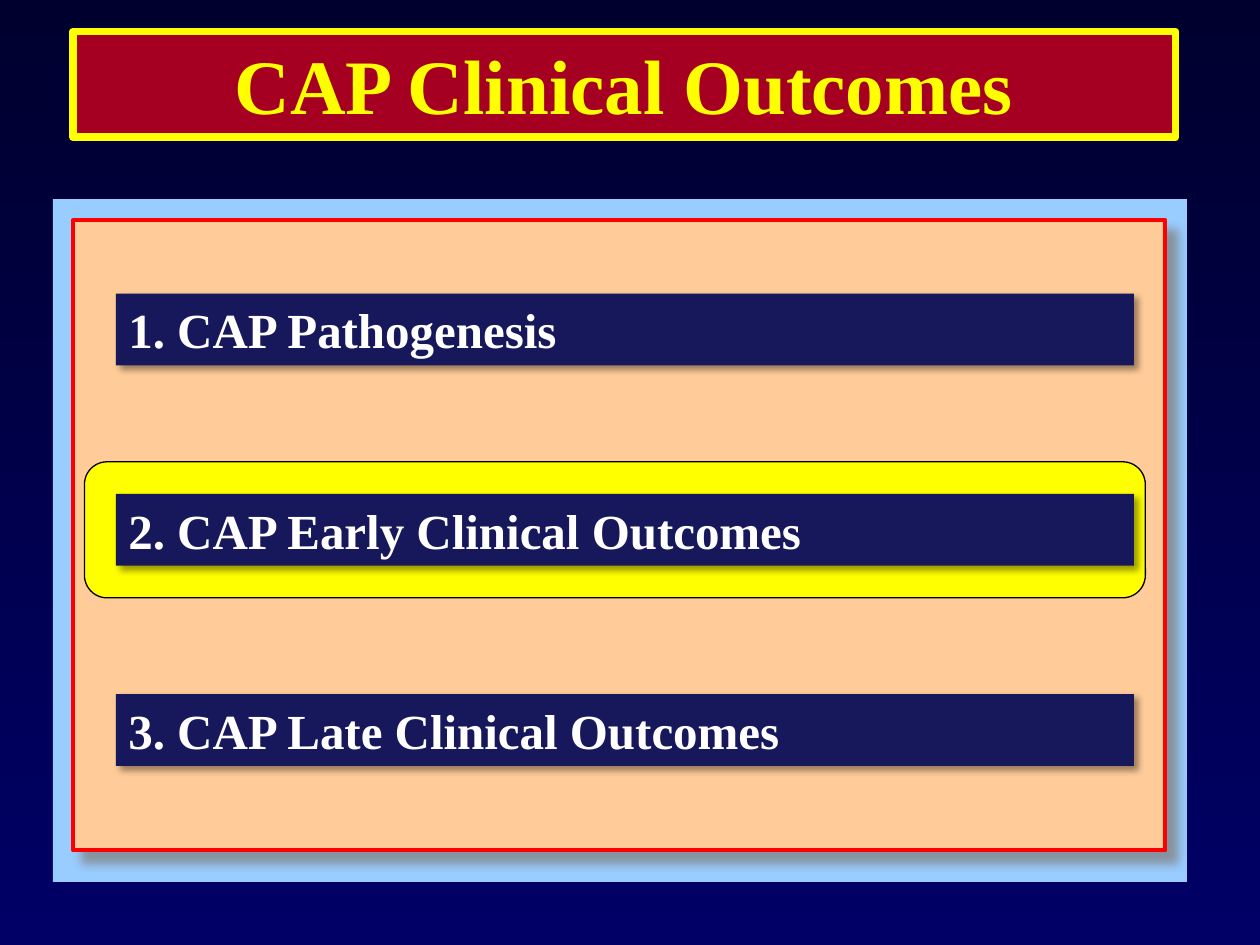
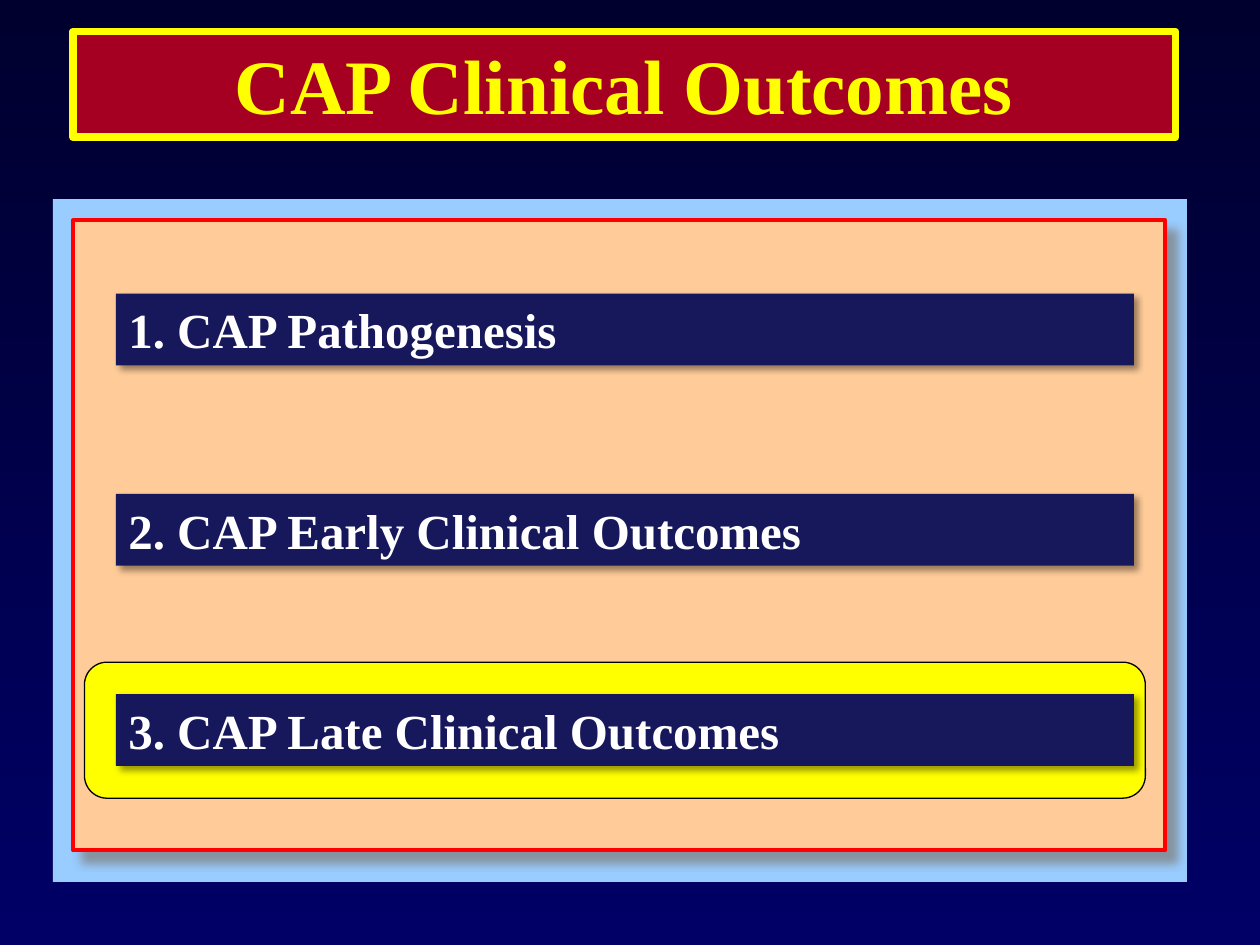
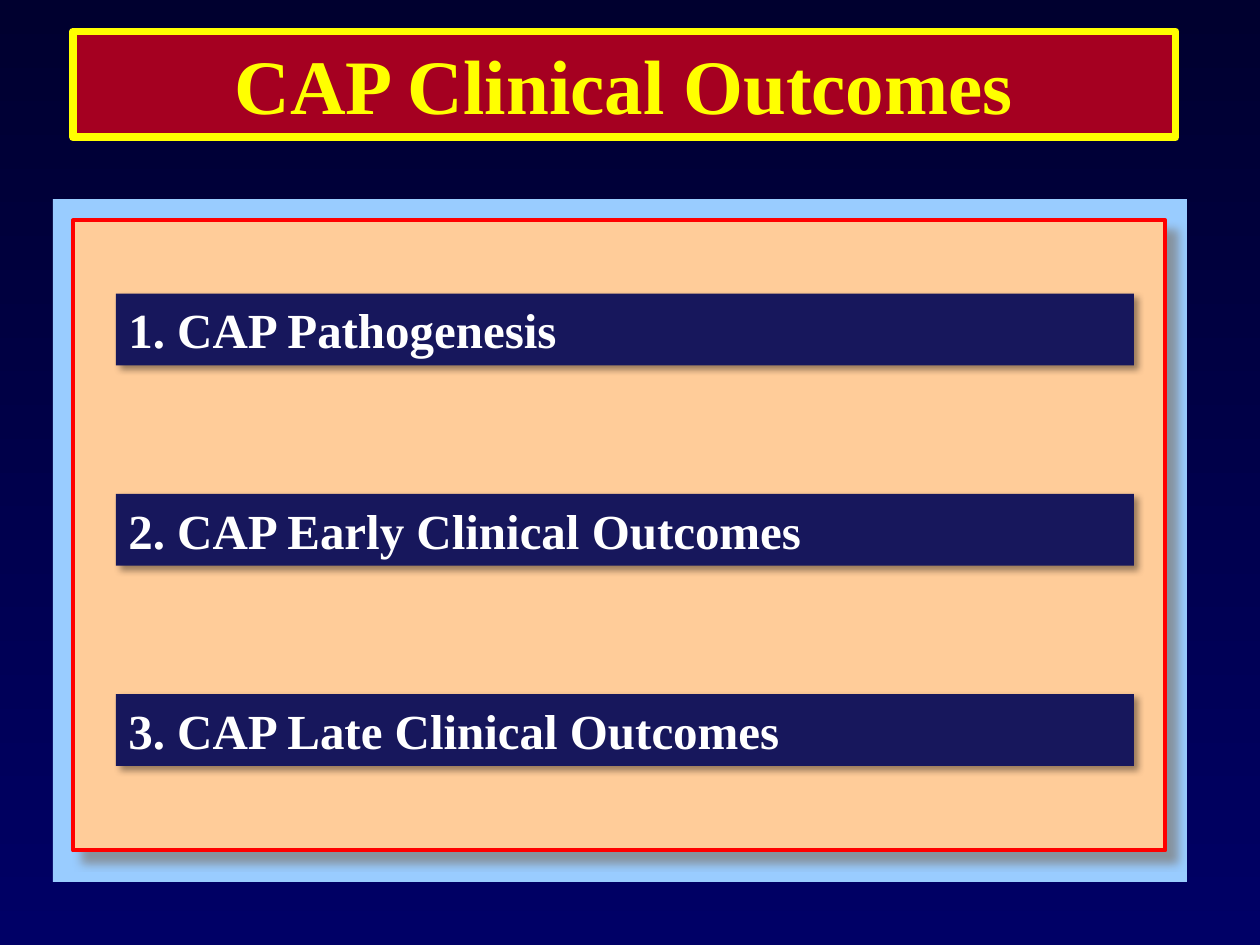
"""Build three agenda slides that highlight the current topic."""
from lxml.etree import SubElement
from pptx import Presentation
from pptx.dml.color import RGBColor
from pptx.enum.shapes import MSO_SHAPE
from pptx.enum.text import MSO_ANCHOR, MSO_AUTO_SIZE, PP_ALIGN
from pptx.oxml.ns import qn
from pptx.util import Inches, Pt

TITLE = "CAP Clinical Outcomes"
TOPICS = ["1. CAP Pathogenesis", "2. CAP Early Clinical Outcomes", "3. CAP Late Clinical Outcomes"]
ACTIVE_TOPICS = [1, 2, None]

FONT = "Times New Roman"
BACKGROUND = ["00002F", "000066"]
TITLE_BOX = (0.58, 0.25, 8.75, 0.84)
FRAME_BOX = (0.42, 1.58, 9, 5.42)
PANEL_BOX = (0.58, 1.75, 8.67, 5)
BAR_LEFT, BAR_TOP, BAR_WIDTH, BAR_HEIGHT, BAR_STEP = 0.92, 2.33, 8.08, 0.57, 1.59
GLOW_LEFT, GLOW_WIDTH, GLOW_HEIGHT = 0.67, 8.42, 1.08

PANEL_SHADOW = {"color": "808080", "alpha": 75, "blur": 5, "dist": 8.5}
BAR_SHADOW = {"color": "000000", "alpha": 40, "blur": 4, "dist": 3}


def rgb(value):
    """Turn a hex string into a colour."""
    return RGBColor.from_string(value)


def add_shadow(shape, color, alpha, blur, dist):
    """Cast a shadow to the lower right; lengths are points."""
    effects = shape._element.spPr.find(qn("a:effectLst"))
    outer = SubElement(effects, qn("a:outerShdw"), blurRad=str(Pt(blur)), dist=str(Pt(dist)),
                       dir=str(45 * 60000), algn="tl", rotWithShape="0")
    clr = SubElement(outer, qn("a:srgbClr"), val=color)
    SubElement(clr, qn("a:alpha"), val=str(alpha * 1000))


def style_box(shape, fill, line=None, width=0.75, shadow=None):
    """Set fill, outline and shadow."""
    shape.fill.solid()
    shape.fill.fore_color.rgb = rgb(fill)
    if line:
        shape.line.color.rgb = rgb(line)
        shape.line.width = Pt(width)
    else:
        shape.line.fill.background()
    shape.shadow.inherit = False
    if shadow:
        add_shadow(shape, **shadow)


def write_text(shape, text, size, color, align):
    """Write one bold line that sizes its shape."""
    tf = shape.text_frame
    p = tf.paragraphs[0]
    r = p.add_run()
    r.text = text
    frame = {"word_wrap": True, "auto_size": MSO_AUTO_SIZE.SHAPE_TO_FIT_TEXT,
             "vertical_anchor": MSO_ANCHOR.TOP}
    font = {"name": FONT, "size": Pt(size), "bold": True}
    for target, values in ((tf, frame), (p, {"alignment": align}), (r.font, font)):
        for name, value in values.items():
            setattr(target, name, value)
    r.font.color.rgb = rgb(color)


def add_box(s, box, kind=MSO_SHAPE.RECTANGLE, **style):
    """Add a styled preset shape at a box in inches."""
    sp = s.shapes.add_shape(kind, *map(Inches, box))
    style_box(sp, **style)
    return sp


def add_title(s):
    """Place and format the title placeholder."""
    sp = s.shapes.title
    sp.left, sp.top, sp.width, sp.height = map(Inches, TITLE_BOX)
    style_box(sp, "A50021", "FFFF00", 4.5)
    write_text(sp, TITLE, 44, "FFFF00", PP_ALIGN.CENTER)


def add_agenda(s, active):
    """Draw the panel, the highlight and the topic bars."""
    add_box(s, FRAME_BOX, fill="99CCFF")
    add_box(s, PANEL_BOX, fill="FFCC99", line="FF0000", width=2.25, shadow=PANEL_SHADOW)
    tops = [BAR_TOP + i * BAR_STEP for i in range(len(TOPICS))]
    if active is not None:
        glow_top = tops[active] - (GLOW_HEIGHT - BAR_HEIGHT) / 2
        add_box(s, (GLOW_LEFT, glow_top, GLOW_WIDTH, GLOW_HEIGHT),
                MSO_SHAPE.ROUNDED_RECTANGLE, fill="FFFF00", line="000000")
    for topic, top in zip(TOPICS, tops):
        bar = add_box(s, (BAR_LEFT, top, BAR_WIDTH, BAR_HEIGHT), fill="17175C", shadow=BAR_SHADOW)
        write_text(bar, topic, 28, "FFFFFF", PP_ALIGN.LEFT)


def set_background(master):
    """Give every slide the same vertical gradient."""
    fill = master.background.fill
    fill.gradient()
    fill.gradient_angle = 270
    for stop, color in zip(fill.gradient_stops, BACKGROUND):
        stop.color.rgb = rgb(color)


def main():
    """Build and save the presentation."""
    prs = Presentation()
    prs.slide_width, prs.slide_height = Inches(10), Inches(7.5)
    set_background(prs.slide_master)
    for active in ACTIVE_TOPICS:
        s = prs.slides.add_slide(prs.slide_layouts[5])
        add_title(s)
        add_agenda(s, active)
    prs.save("out.pptx")


if __name__ == "__main__":
    main()
